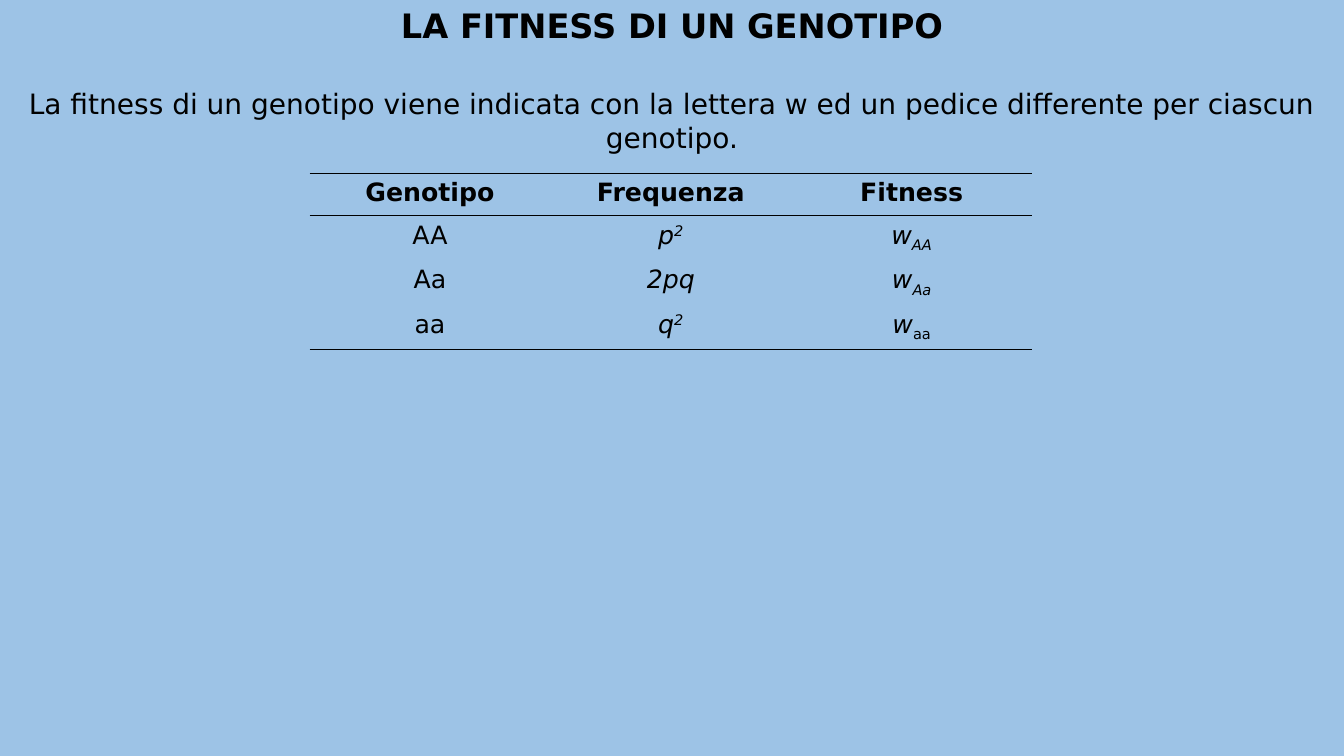
from dataclasses import dataclass

from lxml import etree
from pptx import Presentation
from pptx import util as u
from pptx.dml.color import RGBColor
from pptx.enum import text as t
from pptx.oxml import ns


@dataclass(frozen=True)
class Theme:
    font: str = "DejaVu Sans"
    ink: str = "000000"
    back: str = "9DC3E6"
    title: int = 24
    body: int = 20
    cell: int = 18
    rule: float = 1


@dataclass(frozen=True)
class Piece:
    text: str
    bold: bool = False
    slant: bool = False
    shift: int = 0  # baseline, percent of the type size


@dataclass(frozen=True)
class Box:
    left: float
    top: float
    width: float
    height: float


THEME = Theme()
WIDE, HIGH = 33.87, 19.05
HEAD = Box(0, 0, WIDE, 1.27)
INTRO = Box(0, 2.06, WIDE, 1.96)
GRID = Box(7.8, 4.37, 18.21, 4.28)
RULES = {0, 1, 4}  # horizontal table lines, counted from the top
SUP, SUB = 30, -25

ROWS = [
    [[Piece(name, bold=True)] for name in ("Genotipo", "Frequenza", "Fitness")],
    [
        [Piece("AA")],
        [Piece("p", slant=True), Piece("2", slant=True, shift=SUP)],
        [Piece("w", slant=True), Piece("AA", slant=True, shift=SUB)],
    ],
    [
        [Piece("Aa")],
        [Piece("2pq", slant=True)],
        [Piece("w", slant=True), Piece("Aa", slant=True, shift=SUB)],
    ],
    [
        [Piece("aa")],
        [Piece("q", slant=True), Piece("2", slant=True, shift=SUP)],
        [Piece("w", slant=True), Piece("aa", shift=SUB)],
    ],
]


def write(frame, pieces: list[Piece], size: int) -> None:
    """Fill a text frame with one centred paragraph."""
    para = frame.paragraphs[0]
    para.alignment = t.PP_ALIGN.CENTER
    for piece in pieces:
        run = para.add_run()
        run.text = piece.text
        font = run.font
        font.name, font.size = THEME.font, u.Pt(size)
        font.bold, font.italic = piece.bold, piece.slant
        font.color.rgb = RGBColor.from_string(THEME.ink)
        if piece.shift:
            run._r.get_or_add_rPr().set("baseline", str(piece.shift * 1000))


def place(shape, box: Box) -> None:
    """Position a text shape and set how its text sits."""
    shape.left, shape.top = u.Cm(box.left), u.Cm(box.top)
    shape.width, shape.height = u.Cm(box.width), u.Cm(box.height)
    frame = shape.text_frame
    frame.word_wrap = True
    frame.auto_size = t.MSO_AUTO_SIZE.SHAPE_TO_FIT_TEXT
    frame.vertical_anchor = t.MSO_ANCHOR.TOP


def edge(cell, side: str, shown: bool) -> None:
    """Draw or clear one border of a table cell."""
    props = cell._tc.get_or_add_tcPr()
    line = etree.SubElement(props, ns.qn(f"a:ln{side}"))
    if shown:
        line.set("w", str(u.Pt(THEME.rule)))
        fill = etree.SubElement(line, ns.qn("a:solidFill"))
        etree.SubElement(fill, ns.qn("a:srgbClr")).set("val", THEME.ink)
    else:
        etree.SubElement(line, ns.qn("a:noFill"))


def grid(slide, box: Box, rows: list[list[list[Piece]]]) -> None:
    """Build the table with equal rows and columns."""
    count, wide = len(rows), len(rows[0])
    table = slide.shapes.add_table(
        count, wide, u.Cm(box.left), u.Cm(box.top), u.Cm(box.width), u.Cm(box.height)
    ).table
    table.first_row = table.horz_banding = False
    for r, row in enumerate(rows):
        table.rows[r].height = u.Cm(box.height / count)
        for c, pieces in enumerate(row):
            cell = table.cell(r, c)
            write(cell.text_frame, pieces, THEME.cell)
            sides = {"L": False, "R": False, "T": r in RULES, "B": r + 1 in RULES}
            for side, shown in sides.items():
                edge(cell, side, shown)
            cell.fill.background()


def main() -> None:
    deck = Presentation()
    deck.slide_width, deck.slide_height = u.Cm(WIDE), u.Cm(HIGH)
    slide = deck.slides.add_slide(deck.slide_layouts.get_by_name("Title Only"))
    slide.background.fill.solid()
    slide.background.fill.fore_color.rgb = RGBColor.from_string(THEME.back)

    # Title
    title = slide.shapes.title
    place(title, HEAD)
    write(title.text_frame, [Piece("LA FITNESS DI UN GENOTIPO", bold=True)], THEME.title)

    # Introduction
    intro = slide.shapes.add_textbox(0, 0, 0, 0)
    place(intro, INTRO)
    words = (
        "La fitness di un genotipo viene indicata con la lettera w "
        "ed un pedice differente per ciascun genotipo."
    )
    write(intro.text_frame, [Piece(words)], THEME.body)

    # Genotype table
    grid(slide, GRID, ROWS)
    deck.save("out.pptx")


if __name__ == "__main__":
    main()
